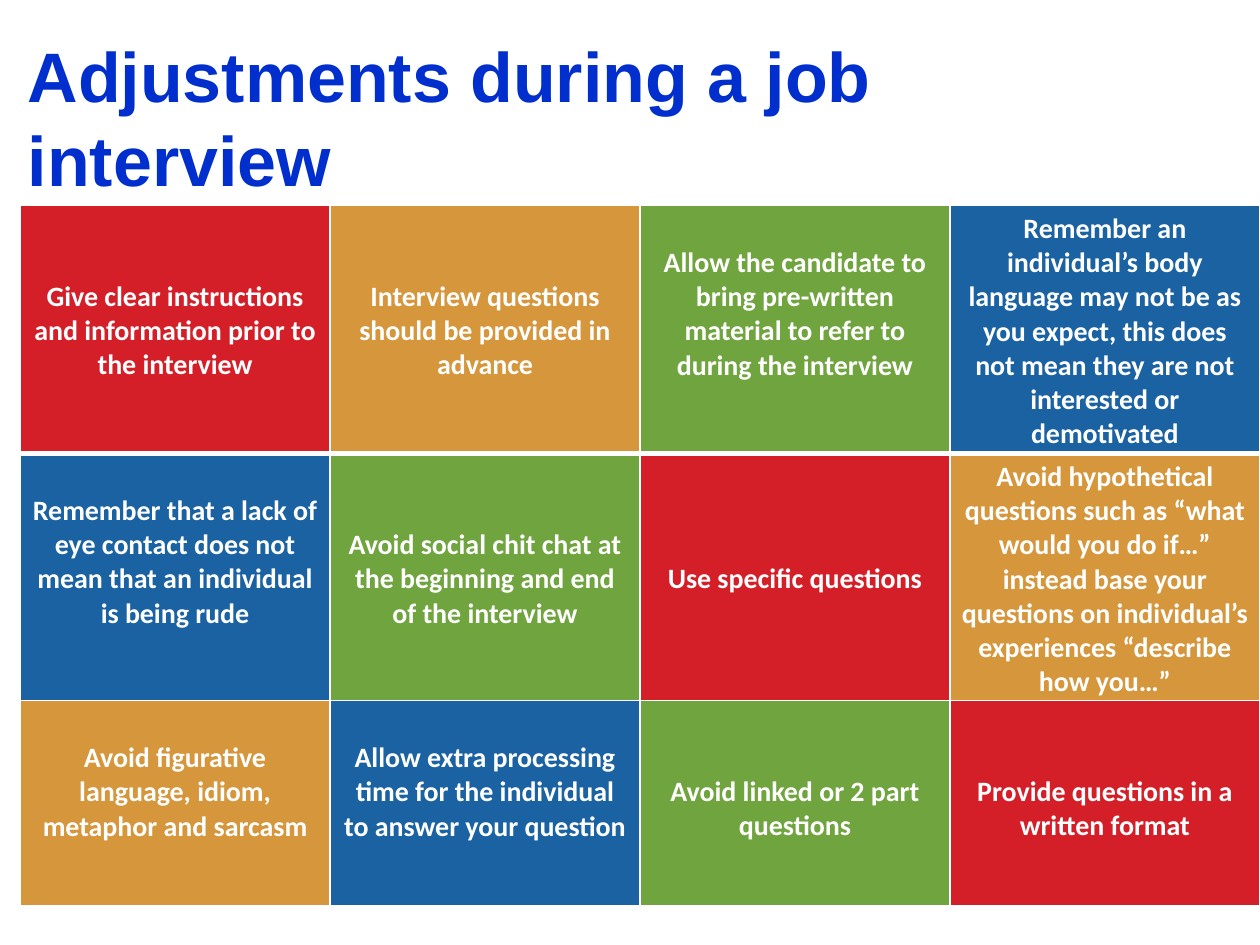
"""Build a slide listing adjustments to make during a job interview."""
from lxml import etree
from pptx import Presentation
from pptx.dml.color import RGBColor
from pptx.enum.text import MSO_ANCHOR, MSO_AUTO_SIZE, PP_ALIGN
from pptx.oxml.ns import qn
from pptx.util import Inches, Pt

LEFT, CENTER = PP_ALIGN.LEFT, PP_ALIGN.CENTER
TOP = MSO_ANCHOR.TOP
NO_AUTOFIT = MSO_AUTO_SIZE.NONE
TITLE_ONLY = 5

WHITE = RGBColor(0xFF, 0xFF, 0xFF)
TITLE_BLUE = RGBColor(0x00, 0x2F, 0xCD)
RED = RGBColor(0xD4, 0x1F, 0x29)
AMBER = RGBColor(0xD5, 0x96, 0x3C)
GREEN = RGBColor(0x70, 0xA4, 0x3E)
BLUE = RGBColor(0x1A, 0x62, 0xA2)

TITLE = "Adjustments during a job interview"
ADJUSTMENTS = [
    [
        ("Give clear instructions and information prior to the interview", RED, 2),
        ("Interview questions should be provided in advance", AMBER, 2),
        ("Allow the candidate to bring pre-written material to refer to "
         "during the interview", GREEN, 1),
        ("Remember an individual’s body language may not be as you expect, "
         "this does not mean they are not interested or demotivated", BLUE, 0),
    ],
    [
        ("Remember that a lack of eye contact does not mean that an "
         "individual is being rude", BLUE, 1),
        ("Avoid social chit chat at the beginning and end of the interview", GREEN, 2),
        ("Use specific questions", RED, 3),
        ("Avoid hypothetical questions such as “what would you do if…” "
         "instead base your questions on individual’s experiences "
         "“describe how you…”", AMBER, 0),
    ],
    [
        ("Avoid figurative language, idiom, metaphor and sarcasm", AMBER, 1),
        ("Allow extra processing time for the individual to answer your "
         "question", BLUE, 1),
        ("Avoid linked or 2 part questions", GREEN, 2),
        ("Provide questions in a written format", RED, 2),
    ],
]
ROW_HEIGHTS = [1.97, 1.96, 1.63]
COLUMN_WIDTH = 2.46
LINE_HEIGHT = 0.27


def write(frame, text, *, size, font, color, align):
    frame.text = text
    paragraph = frame.paragraphs[0]
    paragraph.alignment = align
    paragraph.font.size = Pt(size)
    paragraph.font.name = font
    paragraph.font.bold = True
    paragraph.font.color.rgb = color
    return paragraph


def set_borders(cell, widths):
    properties = cell._tc.get_or_add_tcPr()
    for position, (side, width) in enumerate(widths.items()):
        line = etree.Element(qn(f"a:ln{side}"), w=str(Pt(width)))
        fill = etree.SubElement(line, qn("a:solidFill"))
        etree.SubElement(fill, qn("a:srgbClr"), val=str(WHITE))
        properties.insert(position, line)


def add_title(slide):
    title = slide.shapes.title
    title.left, title.top = Inches(0.12), Inches(0.21)
    title.width, title.height = Inches(7.48), Inches(1.45)
    frame = title.text_frame
    frame.word_wrap = True
    frame.auto_size = NO_AUTOFIT
    frame.vertical_anchor = TOP
    heading = write(frame, TITLE, size=40, font="Arial", color=TITLE_BLUE, align=LEFT)
    heading.space_before = Pt(1)
    heading.line_spacing = Pt(48)


def add_adjustments(slide):
    column_count = len(ADJUSTMENTS[0])
    grid = slide.shapes.add_table(
        len(ADJUSTMENTS), column_count, Inches(0.16), Inches(1.63),
        Inches(COLUMN_WIDTH * column_count), Inches(sum(ROW_HEIGHTS))).table
    for column in grid.columns:
        column.width = Inches(COLUMN_WIDTH)
    for r, adjustments in enumerate(ADJUSTMENTS):
        grid.rows[r].height = Inches(ROW_HEIGHTS[r])
        borders = {"L": 1, "R": 1, "T": 3 if r == 1 else 1, "B": 3 if r == 0 else 1}
        for c, (advice, color, lines_above) in enumerate(adjustments):
            cell = grid.cell(r, c)
            cell.fill.solid()
            cell.fill.fore_color.rgb = color
            cell.vertical_anchor = TOP
            cell.margin_left = cell.margin_right = Inches(0.09)
            cell.margin_top = Inches(0.05 + lines_above * LINE_HEIGHT)
            cell.margin_bottom = Inches(0.01)
            write(cell.text_frame, advice, size=16, font="Calibri", color=WHITE,
                  align=CENTER)
            set_borders(cell, borders)


def main():
    deck = Presentation()
    deck.slide_width, deck.slide_height = Inches(10), Inches(7.5)
    slide = deck.slides.add_slide(deck.slide_layouts[TITLE_ONLY])
    add_title(slide)
    add_adjustments(slide)
    deck.save("out.pptx")


if __name__ == "__main__":
    main()
